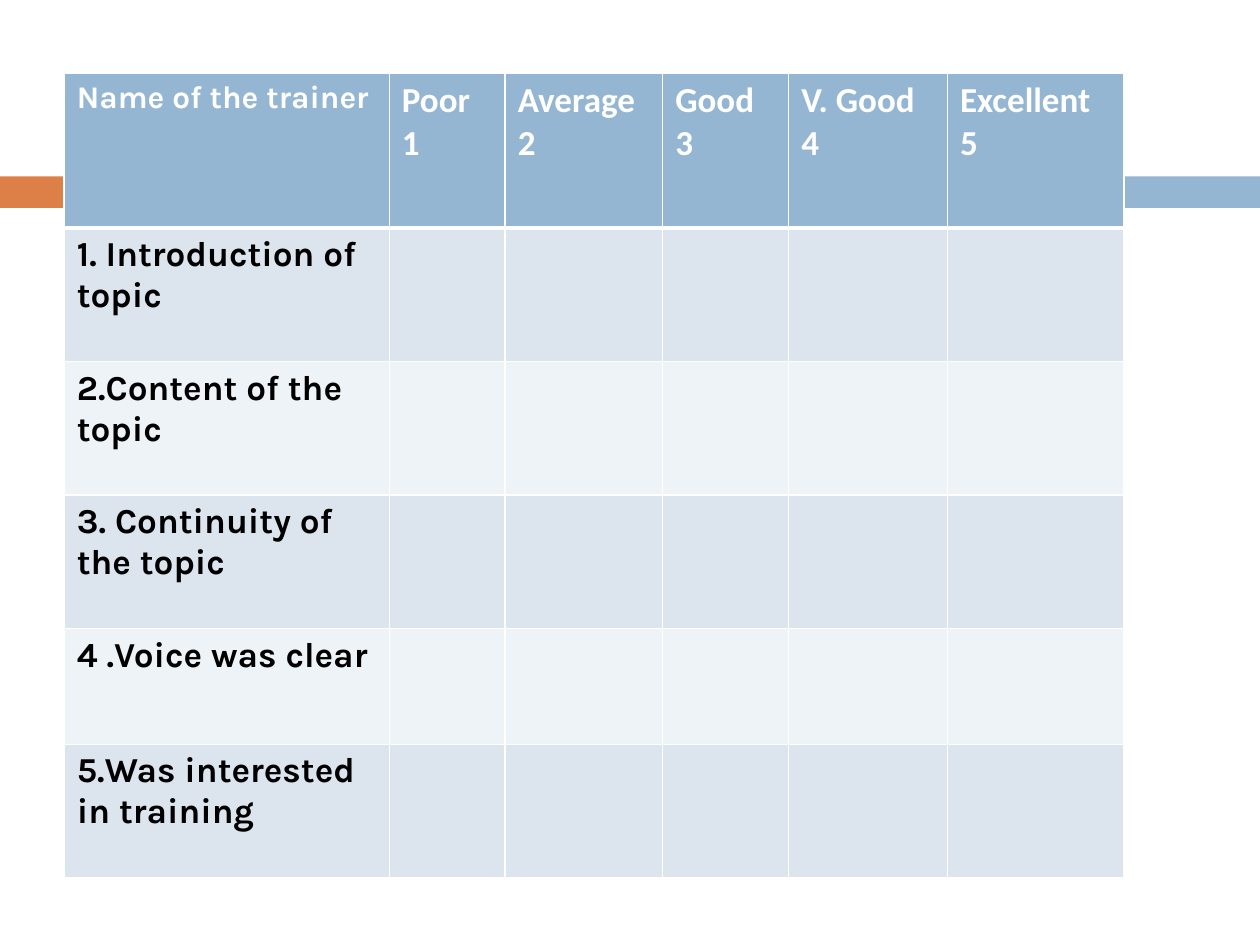
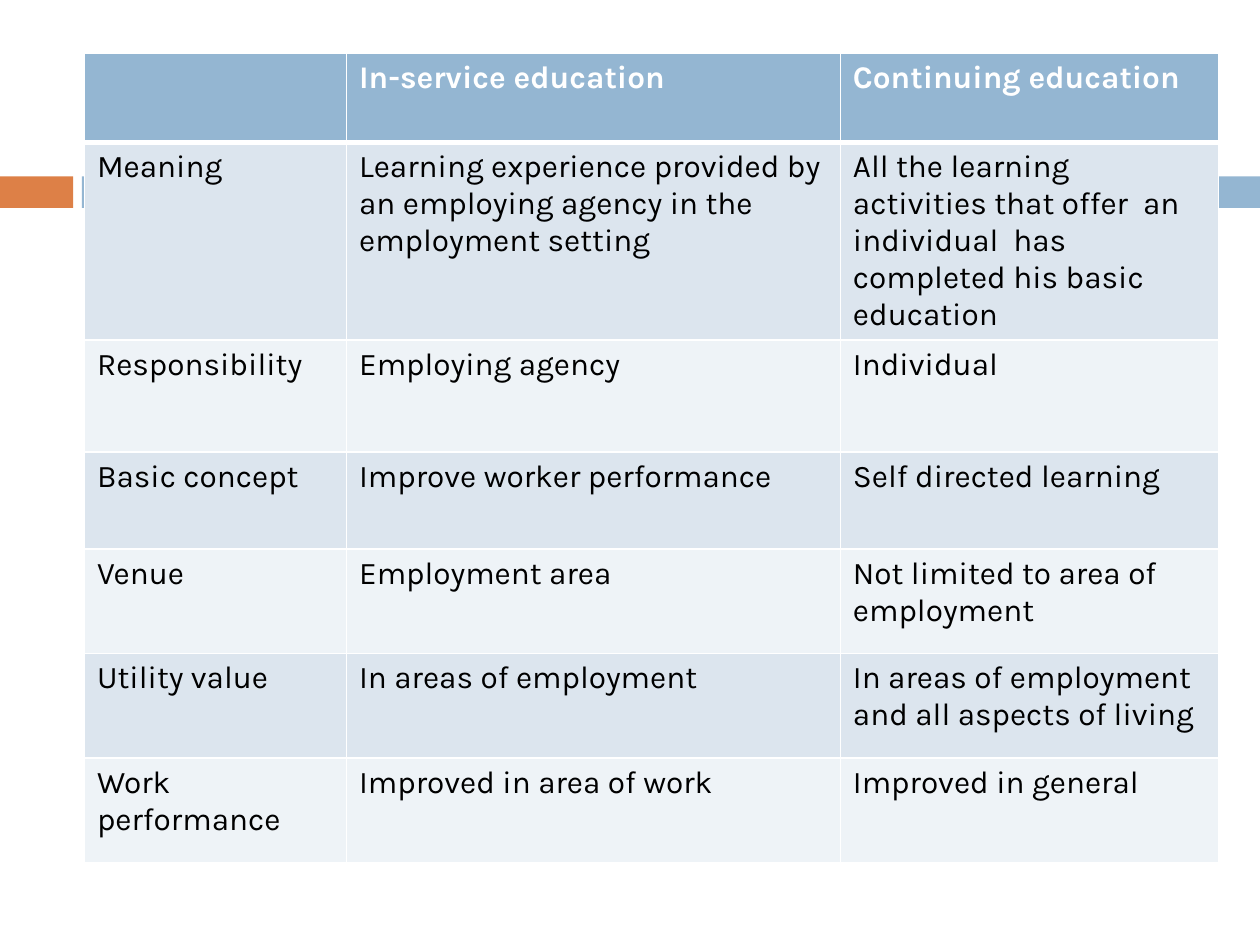
from pptx import Presentation
from pptx.dml.color import RGBColor
from pptx.enum.shapes import MSO_SHAPE as Shape
from pptx.oxml.ns import qn
from pptx.util import Inches, Pt
from lxml.etree import SubElement

ORANGE = RGBColor(0xDD, 0x80, 0x47)
BLUE = RGBColor(0x94, 0xB6, 0xD2)
PALE_BLUE = RGBColor(0xDC, 0xE5, 0xEE)
LIGHT_BLUE = RGBColor(0xEE, 0xF3, 0xF7)
WHITE = RGBColor(0xFF, 0xFF, 0xFF)
BLACK = RGBColor(0, 0, 0)

BAND_TOP, BAND_HEIGHT = 1.4, 0.25
BANDS = [(0, 0.58, ORANGE), (0.65, 9.35, BLUE)]

KARLA_18 = {"name": "Karla", "size": Pt(18), "bold": True}
KARLA_20 = {"name": "Karla", "size": Pt(20), "bold": True}
CALIBRI_20 = {"name": "Calibri", "size": Pt(20), "bold": True}
KARLA_PLAIN = {"name": "Karla", "size": Pt(18), "bold": False}

RATINGS = ["Poor", "Average", "Good", "V. Good", "Excellent"]
CRITERIA = [
    "1. Introduction of topic",
    "2.Content of the topic",
    "3. Continuity of the topic",
    "4 .Voice was clear",
    "5.Was interested in training",
]

EVALUATION = {
    "left": 0.51, "top": 0.58,
    "columns": [2.58, 0.92, 1.25, 1, 1.26, 1.4],
    "rows": [1.23, 1.06, 1.06, 1.06, 0.92, 1.06],
    "cells": [["Name of the trainer"]
              + [f"{rating}\n{score}" for score, rating in enumerate(RATINGS, 1)]]
             + [[criterion] + [""] * len(RATINGS) for criterion in CRITERIA],
    "corner": KARLA_18, "header": CALIBRI_20, "body": KARLA_20,
}

COMPARISON = {
    "left": 0.67, "top": 0.42,
    "columns": [2.08, 3.92, 3],
    "rows": [0.71, 1.55, 0.89, 0.77, 0.83, 0.83, 0.83],
    "cells": [
        ["", "In-service education", "Continuing education"],
        ["Meaning",
         "Learning experience provided by an employing agency in the employment setting",
         "All the learning activities that offer  an individual  has completed his basic education"],
        ["Responsibility", "Employing agency", "Individual"],
        ["Basic concept", "Improve worker performance", "Self directed learning"],
        ["Venue", "Employment area", "Not limited to area of employment"],
        ["Utility value", "In areas of employment",
         "In areas of employment and all aspects of living"],
        ["Work performance", "Improved in area of work", "Improved in general"],
    ],
    "corner": KARLA_18, "header": KARLA_18, "body": KARLA_PLAIN,
}


def add_bands(slide):
    for left, width, color in BANDS:
        band = slide.shapes.add_shape(Shape.RECTANGLE, Inches(left), Inches(BAND_TOP),
                                      Inches(width), Inches(BAND_HEIGHT))
        band.shadow.inherit = False
        band.fill.solid()
        band.fill.fore_color.rgb = color
        band.line.fill.background()


def set_borders(cell, row):
    properties = cell._tc.get_or_add_tcPr()
    widths = {"lnL": 1, "lnR": 1, "lnT": 3 if row == 1 else 1, "lnB": 3 if row == 0 else 1}
    for side, width in widths.items():
        line = SubElement(properties, qn(f"a:{side}"), w=str(Pt(width)))
        fill = SubElement(line, qn("a:solidFill"))
        SubElement(fill, qn("a:srgbClr"), val=str(WHITE))


def write_cell(cell, text, style, color):
    cell.text = text
    for paragraph in cell.text_frame.paragraphs:
        for font in [paragraph.font] + [run.font for run in paragraph.runs]:
            for attribute, value in style.items():
                setattr(font, attribute, value)
            font.color.rgb = color


def add_grid(slide, content):
    columns, rows = content["columns"], content["rows"]
    table = slide.shapes.add_table(
        len(rows), len(columns), Inches(content["left"]), Inches(content["top"]),
        Inches(sum(columns)), Inches(sum(rows))).table
    for column, width in zip(table.columns, columns):
        column.width = Inches(width)
    for row, height in zip(table.rows, rows):
        row.height = Inches(height)
    for row, texts in enumerate(content["cells"]):
        for column, text in enumerate(texts):
            cell = table.cell(row, column)
            if row == 0:
                role, fill, color = "header" if column else "corner", BLUE, WHITE
            else:
                role, fill, color = "body", PALE_BLUE if row % 2 else LIGHT_BLUE, BLACK
            set_borders(cell, row)
            cell.fill.solid()
            cell.fill.fore_color.rgb = fill
            write_cell(cell, text, content[role], color)


presentation = Presentation()
presentation.slide_width, presentation.slide_height = Inches(10), Inches(7.5)
for content in (EVALUATION, COMPARISON):
    slide = presentation.slides.add_slide(presentation.slide_layouts[6])
    add_bands(slide)
    add_grid(slide, content)
presentation.save("out.pptx")
